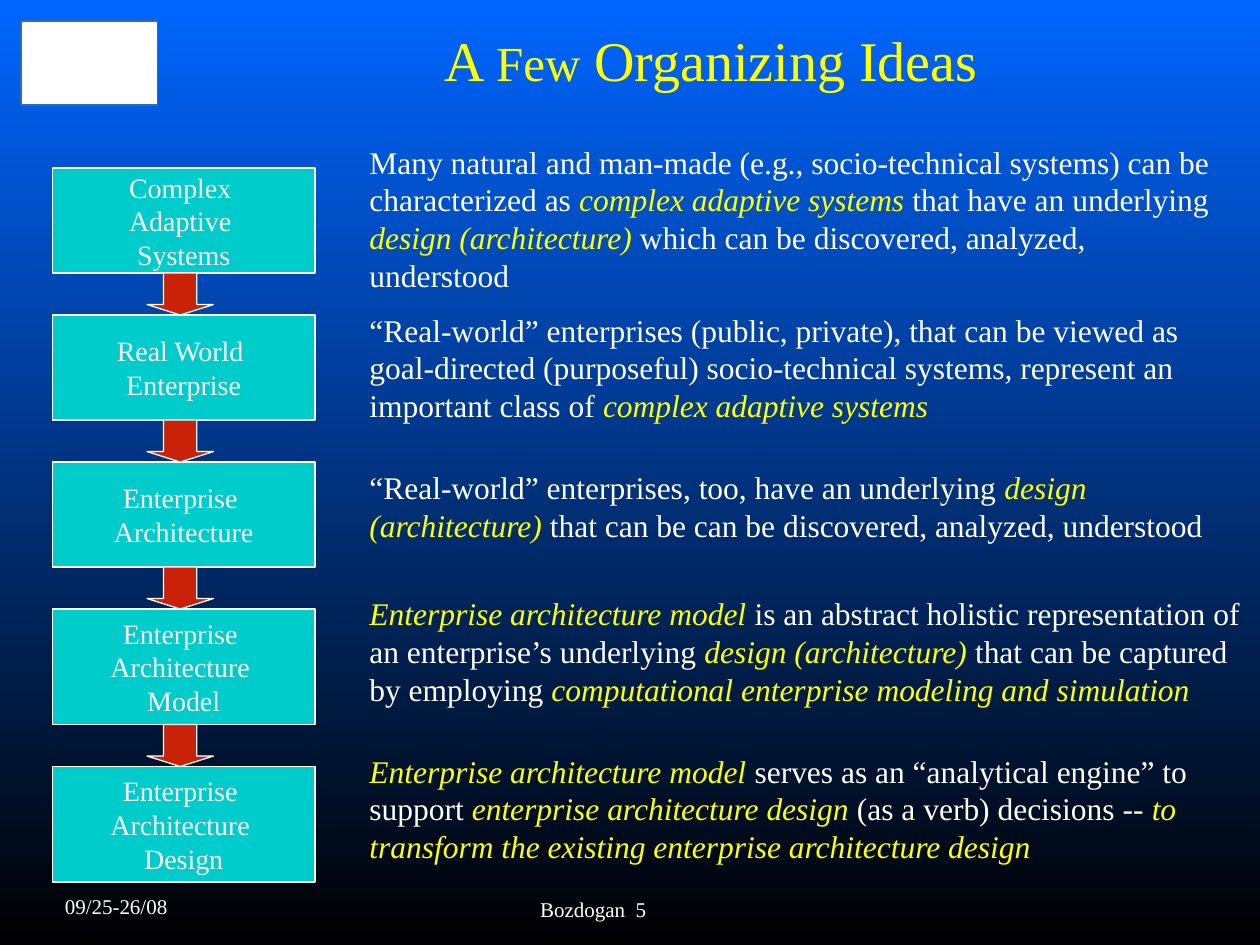
from dataclasses import dataclass

from pptx import Presentation
from pptx.dml.color import RGBColor as Rgb
from pptx.enum.shapes import MSO_SHAPE as Kind
from pptx.enum.text import MSO_ANCHOR as Anchor, MSO_AUTO_SIZE as Fit, PP_ALIGN as Align
from pptx.util import Pt


@dataclass(frozen=True)
class Theme:
    """Colours, font and type sizes of the slide."""
    font: str = "Times New Roman"
    sky: str = "0066FF"
    night: str = "000000"
    white: str = "FFFFFF"
    mark: str = "FFFF00"
    teal: str = "00CCCC"
    red: str = "C92209"
    edge: str = "2B6EB5"
    title: int = 32
    small: int = 28
    body: int = 18
    label: int = 16
    foot: int = 12


@dataclass(frozen=True)
class Step:
    """One box of the chain and the idea beside it."""
    top: float
    high: float
    label: str
    note_top: float
    note_wide: float
    note_high: float
    note: str


T = Theme()
LEFT, WIDE = 30, 150
ARROW_LEFT, ARROW_WIDE, GAP = 84, 38, 24
NOTE_LEFT = 204

STEPS = [
    Step(96, 60, "Complex \nAdaptive \nSystems", 78, 504, 94,
         "Many natural and man-made (e.g., socio-technical systems) can be characterized as "
         "*complex adaptive systems* that have an underlying *design (architecture) *"
         "which can be discovered, analyzed, understood"),
    Step(180, 60, "Real World \nEnterprise", 174, 516, 72,
         "“Real-world” enterprises (public, private), that can be viewed as goal-directed "
         "(purposeful) socio-technical systems, represent an important class of "
         "*complex adaptive systems*"),
    Step(264, 60, "Enterprise \nArchitecture", 264, 508, 50,
         "“Real-world” enterprises, too, have an underlying *design (architecture)* "
         "that can be can be discovered, analyzed, understood"),
    Step(348, 66, "Enterprise \nArchitecture \nModel", 336, 516, 72,
         "*Enterprise architecture model* is an abstract holistic representation of an "
         "enterprise’s underlying *design (architecture)* that can be captured by employing "
         "*computational enterprise modeling and simulation*"),
    Step(438, 66, "Enterprise \nArchitecture \nDesign", 426, 492, 72,
         "*Enterprise architecture model* serves as an “analytical engine” to support "
         "*enterprise architecture design* (as a verb) decisions -- "
         "*to transform the existing enterprise architecture design*"),
]


def write(frame, text: str, *, size: int, color: str = T.white, align=Align.LEFT,
          anchor=Anchor.TOP, wrap: bool = True, fit=Fit.NONE) -> None:
    """Fill a frame with lines of text, setting *marked* parts in yellow italics."""
    frame.auto_size = fit
    frame.word_wrap = wrap
    frame.vertical_anchor = anchor
    for row, line in enumerate(text.split("\n")):
        para = frame.add_paragraph() if row else frame.paragraphs[0]
        para.alignment = align
        for spot, part in enumerate(line.split("*")):
            if part:
                run = para.add_run()
                run.text = part
                font = run.font
                font.name, font.size = T.font, Pt(size)
                font.italic = spot % 2 == 1
                font.color.rgb = Rgb.from_string(T.mark if spot % 2 else color)


def draw(slide, kind, left: float, top: float, wide: float, high: float,
         fill: str, line: str = T.white, width: float = 0.75):
    """Add a filled preset shape."""
    shape = slide.shapes.add_shape(kind, Pt(left), Pt(top), Pt(wide), Pt(high))
    shape.shadow.inherit = False
    shape.fill.solid()
    shape.fill.fore_color.rgb = Rgb.from_string(fill)
    shape.line.color.rgb = Rgb.from_string(line)
    shape.line.width = Pt(width)
    return shape


def note(slide, left: float, top: float, wide: float, high: float, text: str, **form) -> None:
    """Add a text box."""
    box = slide.shapes.add_textbox(Pt(left), Pt(top), Pt(wide), Pt(high))
    write(box.text_frame, text, **form)


def paint(slide) -> None:
    """Shade the background from blue down to black."""
    fill = slide.background.fill
    fill.gradient()
    fill.gradient_angle = 270
    for stop, color in zip(fill.gradient_stops, (T.sky, T.night)):
        stop.color.rgb = Rgb.from_string(color)


def head(slide) -> None:
    """Place and format the title."""
    title = slide.shapes.title
    title.left, title.top, title.width, title.height = Pt(105), Pt(14), Pt(603), Pt(40)
    write(title.text_frame, "A Few Organizing Ideas", size=T.title, color=T.mark,
          align=Align.CENTER, anchor=Anchor.MIDDLE)
    para = title.text_frame.paragraphs[0]
    para.runs[0].text = "A "
    for text, size in (("Few", T.small), (" Organizing Ideas", T.title)):
        run = para.add_run()
        run.text = text
        run.font.name, run.font.size = T.font, Pt(size)
        run.font.color.rgb = Rgb.from_string(T.mark)


def chain(slide) -> None:
    """Draw the boxes, the arrows between them and their ideas."""
    for step in STEPS:
        box = draw(slide, Kind.RECTANGLE, LEFT, step.top, WIDE, step.high, T.teal)
        write(box.text_frame, step.label, size=T.label, align=Align.CENTER,
              anchor=Anchor.MIDDLE, wrap=False)
        note(slide, NOTE_LEFT, step.note_top, step.note_wide, step.note_high, step.note,
             size=T.body, fit=Fit.SHAPE_TO_FIT_TEXT)
    for step in STEPS[1:]:
        arrow = draw(slide, Kind.DOWN_ARROW, ARROW_LEFT, step.top - GAP, ARROW_WIDE, GAP, T.red)
        arrow.adjustments[0], arrow.adjustments[1] = 0.5, 0.25


def main() -> None:
    """Build and save the slide."""
    deck = Presentation()
    deck.slide_width, deck.slide_height = Pt(720), Pt(540)
    slide = deck.slides.add_slide(deck.slide_layouts[5])
    paint(slide)
    draw(slide, Kind.RECTANGLE, 12, 12, 78, 48, T.white, T.edge, 1)
    head(slide)
    chain(slide)
    note(slide, 30, 507, 174, 24, "09/25-26/08", size=T.foot)
    note(slide, 234, 509, 210, 24, "Bozdogan  5", size=T.foot, align=Align.CENTER)
    deck.save("out.pptx")


if __name__ == "__main__":
    main()
